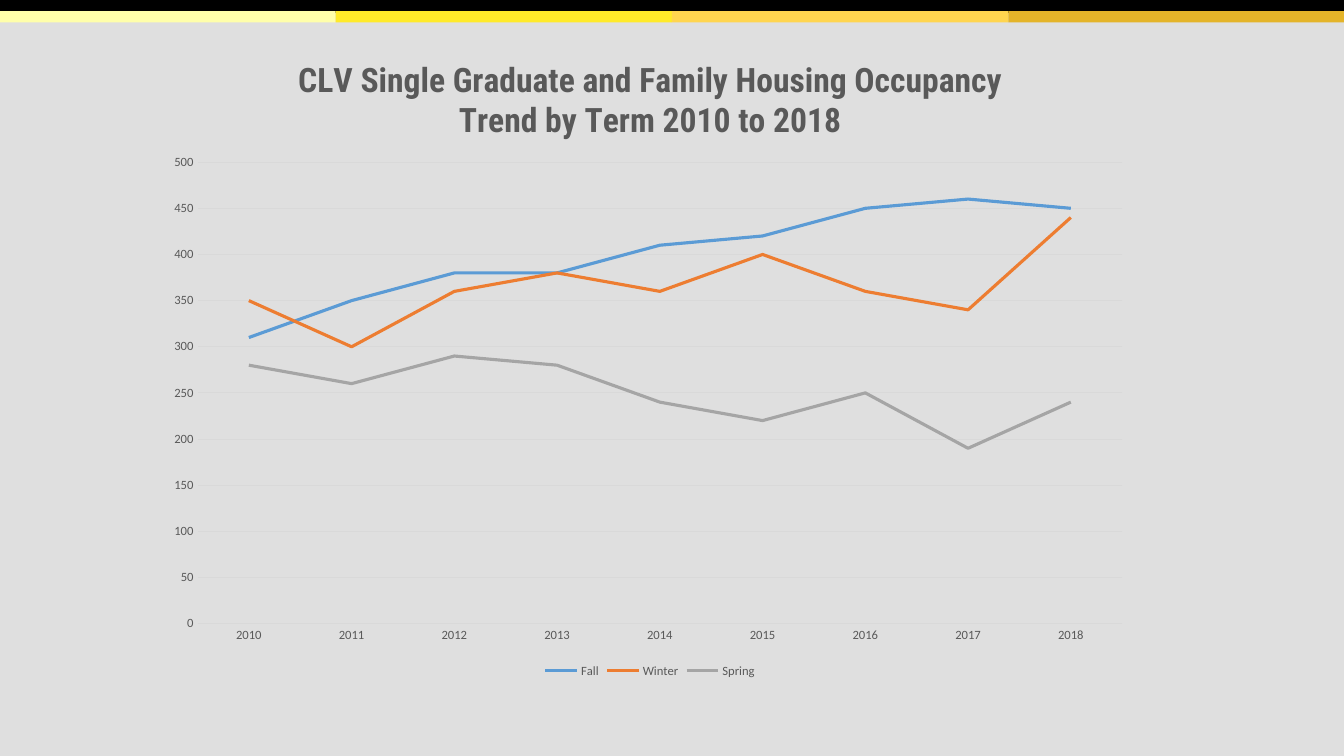
"""Build a slide with a line chart of housing occupancy by term."""
from dataclasses import dataclass

from lxml import etree
from pptx import Presentation
from pptx import util as u
from pptx.chart import data
from pptx.dml import color
from pptx.enum import chart as charts
from pptx.enum import shapes


@dataclass(frozen=True)
class Theme:
    backdrop: str = "DFDFDF"
    ink: str = "595959"
    grid: str = "D9D9D9"
    body_font: str = "Calibri"
    title_font: str = "Roboto Condensed"
    body_size: int = 10
    label_size: int = 9
    title_size: int = 24


@dataclass(frozen=True)
class Bar:
    left: float
    top: float
    width: float
    height: float
    fill: str


@dataclass(frozen=True)
class Term:
    name: str
    residents: tuple[int, ...]
    line: str


THEME = Theme()
STRIPE_WIDTH = 240.3
STRIPE_FILLS = ("FFFFAA", "FFEA29", "FFD54F", "E4B429")
BARS = [Bar(-0.6, 0, 961.2, 9.2, "000000")] + [
    Bar(-0.6 + index * STRIPE_WIDTH, 8, STRIPE_WIDTH, 8, fill)
    for index, fill in enumerate(STRIPE_FILLS)
]
YEARS = [str(year) for year in range(2010, 2019)]
TITLE = "CLV Single Graduate and Family Housing Occupancy Trend by Term 2010 to 2018"
TERMS = (
    Term("Fall", (310, 350, 380, 380, 410, 420, 450, 460, 450), "5B9BD5"),
    Term("Winter", (350, 300, 360, 380, 360, 400, 360, 340, 440), "ED7D31"),
    Term("Spring", (280, 260, 290, 280, 240, 220, 250, 190, 240), "A5A5A5"),
)


def rgb(code: str) -> color.RGBColor:
    """Return the colour for a hex code."""
    return color.RGBColor.from_string(code)


def style_font(font, size: int, name: str, code: str, bold: bool = False) -> None:
    """Set size, face, colour and weight of a font."""
    font.size, font.name, font.bold = u.Pt(size), name, bold
    font.color.rgb = rgb(code)


def style_line(line, code: str, width: float) -> None:
    """Set colour and width of a line."""
    line.color.rgb = rgb(code)
    line.width = u.Pt(width)


def draw_bar(page, bar: Bar) -> None:
    """Draw one plain rectangle."""
    box = page.shapes.add_shape(
        shapes.MSO_SHAPE.RECTANGLE,
        u.Pt(bar.left), u.Pt(bar.top), u.Pt(bar.width), u.Pt(bar.height),
    )
    box.shadow.inherit = False
    box.fill.solid()
    box.fill.fore_color.rgb = rgb(bar.fill)
    box.line.fill.background()


def place_plot(chart, left: float, top: float, width: float, height: float) -> None:
    """Fix the inner plot area as fractions of the chart."""
    area = chart.plots[0]._element.getparent()
    space = area.nsmap["c"]
    for old in area.findall(f"{{{space}}}layout"):
        area.remove(old)
    layout = etree.Element(f"{{{space}}}layout")
    manual = etree.SubElement(layout, f"{{{space}}}manualLayout")
    settings = {
        "layoutTarget": "inner", "xMode": "edge", "yMode": "edge",
        "x": left, "y": top, "w": width, "h": height,
    }
    for tag, value in settings.items():
        etree.SubElement(manual, f"{{{space}}}{tag}").set("val", str(value))
    area.insert(0, layout)


def draw_chart(page) -> None:
    """Draw the occupancy chart with its title, axes and legend."""
    table = data.CategoryChartData()
    table.categories = YEARS
    for term in TERMS:
        table.add_series(term.name, term.residents)
    chart = page.shapes.add_chart(
        charts.XL_CHART_TYPE.LINE,
        u.Pt(113), u.Pt(23), u.Pt(702.7), u.Pt(464.4), table,
    ).chart
    style_font(chart.font, THEME.body_size, THEME.body_font, "000000")

    chart.has_title = True
    para = chart.chart_title.text_frame.paragraphs[0]
    para.text = TITLE
    style_font(para.font, THEME.title_size, THEME.title_font, THEME.ink, True)
    chart.chart_title.include_in_layout = False

    chart.has_legend = True
    chart.legend.position = charts.XL_LEGEND_POSITION.BOTTOM
    chart.legend.include_in_layout = False
    for part in (chart.legend.font, chart.category_axis.tick_labels.font,
                 chart.value_axis.tick_labels.font):
        style_font(part, THEME.label_size, THEME.body_font, THEME.ink)

    for axis in (chart.category_axis, chart.value_axis):
        axis.major_tick_mark = axis.minor_tick_mark = charts.XL_TICK_MARK.NONE
    style_line(chart.category_axis.format.line, THEME.grid, 0.75)
    values = chart.value_axis
    values.minimum_scale, values.maximum_scale, values.major_unit = 0, 500, 50
    values.format.line.fill.background()
    style_line(values.major_gridlines.format.line, THEME.grid, 0.75)

    chart.plots[0].vary_by_categories = False
    for series, term in zip(chart.plots[0].series, TERMS):
        series.smooth = False
        series.marker.style = charts.XL_MARKER_STYLE.NONE
        style_line(series.format.line, term.line, 2.25)
    place_plot(chart, 0.04, 0.2, 0.94, 0.71)


def main() -> None:
    """Build and save the deck."""
    deck = Presentation()
    deck.slide_width, deck.slide_height = u.Pt(960), u.Pt(540)
    page = deck.slides.add_slide(deck.slide_layouts[6])
    page.background.fill.solid()
    page.background.fill.fore_color.rgb = rgb(THEME.backdrop)
    for bar in BARS:
        draw_bar(page, bar)
    draw_chart(page)
    deck.save("out.pptx")


if __name__ == "__main__":
    main()
